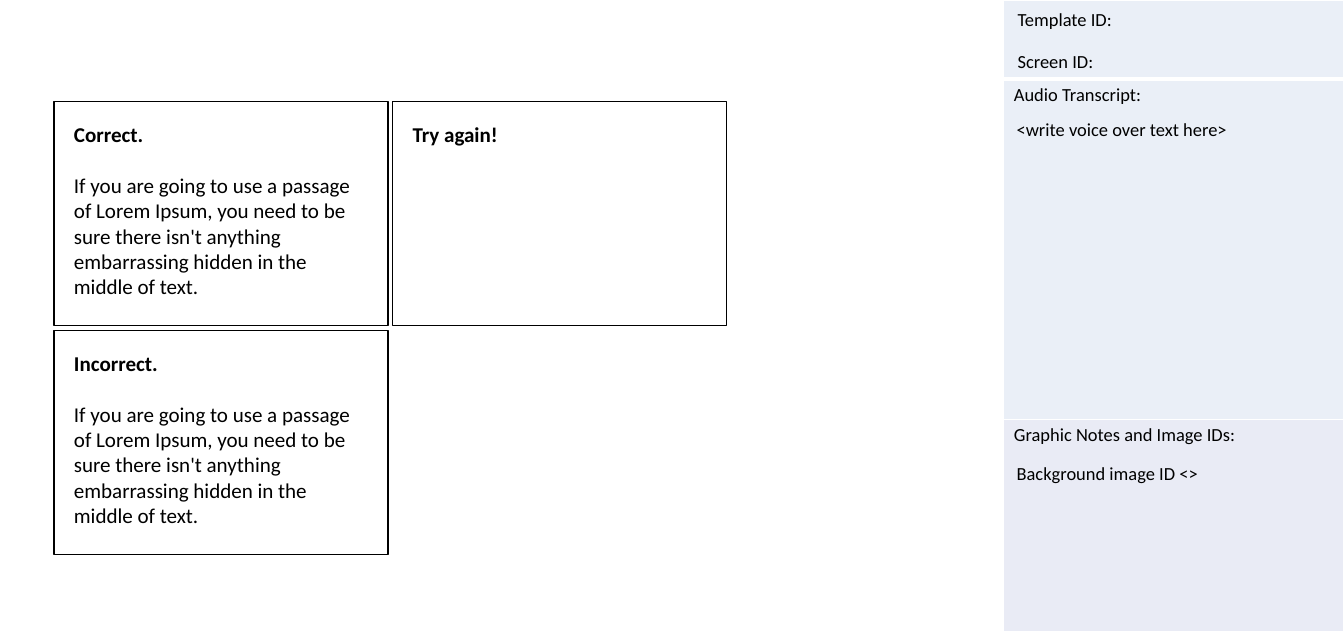
from dataclasses import dataclass

from lxml import etree
from pptx import Presentation
from pptx.dml.color import RGBColor
from pptx.enum.shapes import MSO_SHAPE
from pptx.enum.text import MSO_ANCHOR
from pptx.oxml.ns import qn
from pptx.util import Inches, Pt

RECTANGLE = MSO_SHAPE.RECTANGLE
TOP = MSO_ANCHOR.TOP


@dataclass(frozen=True)
class Theme:
    font: str = "Calibri"
    ink: str = "000000"
    paper: str = "FFFFFF"
    panel: str = "EAEFF7"
    panel_dark: str = "E9EBF5"
    label_size: float = 14
    card_size: float = 16
    card_gap: float = 19.5
    line: float = 1


def color(code):
    return RGBColor.from_string(code)


def write(para, text, *, theme, size, bold=False, before=0):
    para.space_before = Pt(before)
    para.font.size = Pt(size)
    if text:
        span = para.add_run()
        span.text = text
        span.font.name = theme.font
        span.font.size = Pt(size)
        span.font.bold = bold
        span.font.color.rgb = color(theme.ink)


class Storyboard:
    def __init__(self, page, theme):
        self.page = page
        self.theme = theme

    def label(self, text, left, top, width):
        box = self.page.shapes.add_textbox(
            Inches(left), Inches(top), Inches(width), Inches(0.34))
        box.text_frame.word_wrap = True
        write(box.text_frame.paragraphs[0], text,
              theme=self.theme, size=self.theme.label_size)

    def card(self, left, top, width, height, heading, body=None):
        theme = self.theme
        box = self.page.shapes.add_shape(
            RECTANGLE, Inches(left), Inches(top), Inches(width), Inches(height))
        box.shadow.inherit = False
        box.fill.solid()
        box.fill.fore_color.rgb = color(theme.paper)
        box.line.color.rgb = color(theme.ink)
        box.line.width = Pt(theme.line)
        frame = box.text_frame
        frame.word_wrap = True
        frame.vertical_anchor = TOP
        frame.margin_left = frame.margin_right = Inches(0.21)
        frame.margin_top = frame.margin_bottom = Inches(0.21)
        # A new shape centres its text, so align each paragraph to the left
        paras = [frame.paragraphs[0]]
        write(paras[0], heading, theme=theme, size=theme.card_size, bold=True)
        if body:
            paras.append(frame.add_paragraph())
            write(paras[1], body, theme=theme, size=theme.card_size,
                  before=theme.card_gap)
        for para in paras:
            para.alignment = 1

    def cell_borders(self, cell, widths):
        properties = cell._tc.get_or_add_tcPr()
        for side, width in zip("LRTB", widths):
            border = etree.SubElement(
                properties, qn(f"a:ln{side}"), w=str(Pt(width)))
            fill = etree.SubElement(border, qn("a:solidFill"))
            etree.SubElement(fill, qn("a:srgbClr"), val=self.theme.paper)

    def side_panel(self, left, top, width, rows):
        heights = [row[0] for row in rows]
        table = self.page.shapes.add_table(
            len(rows), 1, Inches(left), Inches(top),
            Inches(width), Inches(sum(heights))).table
        table.first_row = table.horz_banding = False
        for index, (height, title, fill, above, below) in enumerate(rows):
            table.rows[index].height = Inches(height)
            cell = table.cell(index, 0)
            cell.margin_left = cell.margin_right = Inches(0.11)
            cell.margin_top = cell.margin_bottom = Inches(0.05)
            line = self.theme.line
            self.cell_borders(cell, (line, line, above, below))
            cell.fill.solid()
            cell.fill.fore_color.rgb = color(fill)
            write(cell.text_frame.paragraphs[0], title,
                  theme=self.theme, size=self.theme.label_size)


def main():
    deck = Presentation()
    deck.slide_width, deck.slide_height = Inches(14.17), Inches(6.69)
    theme = Theme()
    board = Storyboard(deck.slides.add_slide(deck.slide_layouts[6]), theme)

    # Side panel: height, title, fill, border above, border below
    board.side_panel(10.58, 0, 3.59, [
        (0.83, "", theme.panel, 1, 3),
        (3.59, "Audio Transcript:", theme.panel, 3, 1),
        (2.23, "Graphic Notes and Image IDs:", theme.panel_dark, 1, 1),
    ])

    # Labels over the side panel
    for text, left, top, width in (
        ("Screen ID:", 10.63, 0.48, 3.82),
        ("Template ID:", 10.63, 0.04, 3.82),
        ("<write voice over text here>", 10.62, 1.19, 3.56),
        ("Background image ID <>", 10.62, 4.82, 3.56),
    ):
        board.label(text, left, top, width)

    # Feedback cards on a two-column grid
    feedback = ("If you are going to use a passage of Lorem Ipsum, you need to be "
                "sure there isn't anything embarrassing hidden in the middle of text.")
    width, height, gap = 3.52, 2.36, 0.05
    for column, row, heading, body in (
        (0, 0, "Correct.", feedback),
        (0, 1, "Incorrect.", feedback),
        (1, 0, "Try again!", None),
    ):
        board.card(0.57 + column * (width + gap), 1.07 + row * (height + gap),
                   width, height, heading, body)

    deck.save("out.pptx")


if __name__ == "__main__":
    main()
